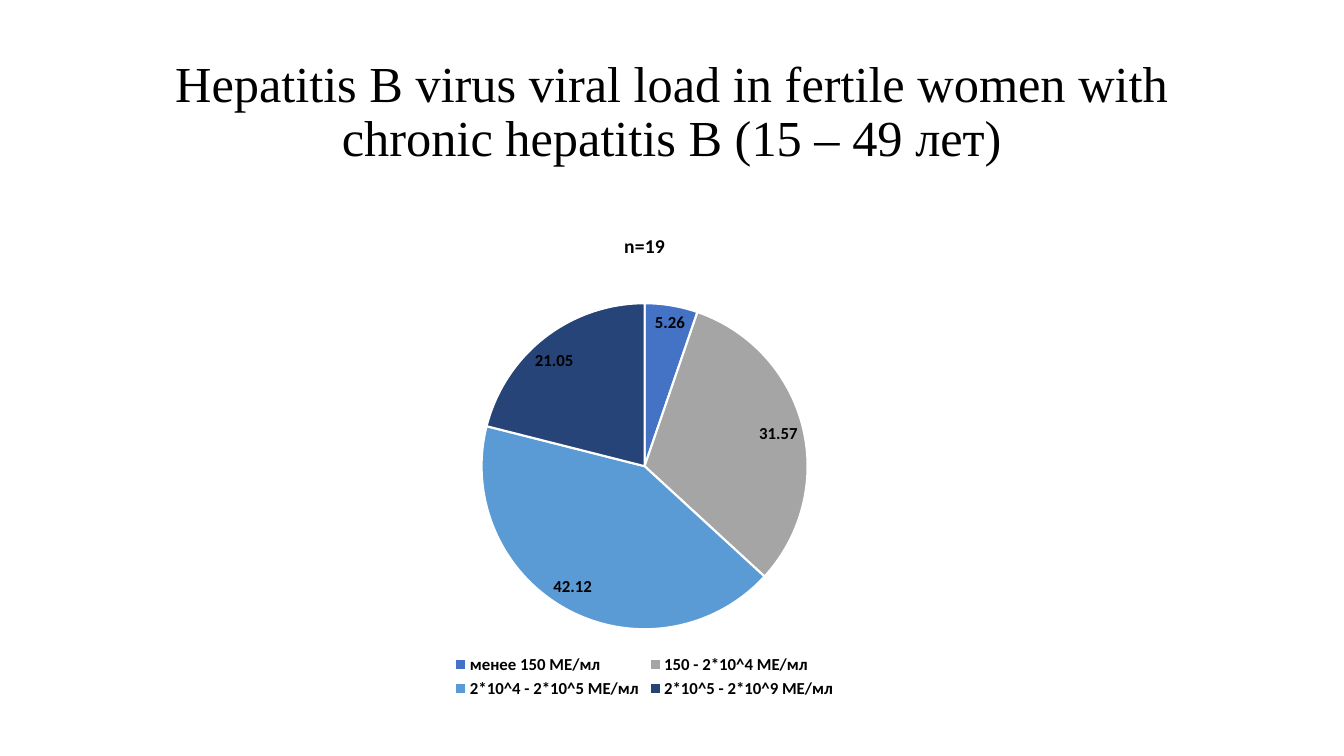
from pptx import Presentation
from pptx.chart.data import CategoryChartData
from pptx.dml.color import RGBColor
from pptx.enum.chart import XL_CHART_TYPE, XL_LABEL_POSITION, XL_LEGEND_POSITION
from pptx.enum.text import MSO_ANCHOR, PP_ALIGN
from pptx.util import Cm, Pt

BLACK = RGBColor(0x00, 0x00, 0x00)
WHITE = RGBColor(0xFF, 0xFF, 0xFF)
BLUE = RGBColor(0x44, 0x72, 0xC4)
GREY = RGBColor(0xA5, 0xA5, 0xA5)
SKY = RGBColor(0x5B, 0x9B, 0xD5)
NAVY = RGBColor(0x26, 0x44, 0x78)

TITLE = "Hepatitis B virus viral load in fertile women with chronic hepatitis B (15 – 49 лет)"
COUNT = "n=19"
LOADS = [
    ("менее 150 МЕ/мл", 5.26, BLUE),
    ("150 - 2*10^4 МЕ/мл", 31.57, GREY),
    ("2*10^4 - 2*10^5 МЕ/мл", 42.12, SKY),
    ("2*10^5 - 2*10^9 МЕ/мл", 21.05, NAVY),
]
HEAD = {"name": "Times New Roman", "size": Pt(36), "bold": False}
LABEL = {"name": "Calibri", "size": Pt(12), "bold": True}
CAPTION = {**LABEL, "size": Pt(14)}


def style(font, look):
    for key, value in look.items():
        setattr(font, key, value)
    font.color.rgb = BLACK


def add_title(slide):
    title = slide.shapes.title
    place = {"left": Cm(2.33), "top": Cm(1.01), "width": Cm(29.21), "height": Cm(3.68)}
    for key, value in place.items():
        setattr(title, key, value)
    frame = title.text_frame
    frame.text = TITLE
    frame.word_wrap = True
    frame.vertical_anchor = MSO_ANCHOR.MIDDLE
    para = frame.paragraphs[0]
    para.alignment = PP_ALIGN.CENTER
    para.line_spacing = 0.9
    style(para.runs[0].font, HEAD)


def add_pie(slide):
    names, shares, fills = zip(*LOADS)
    data = CategoryChartData()
    data.categories = names
    data.add_series("Series 1", shares)
    chart = slide.shapes.add_chart(
        XL_CHART_TYPE.PIE, Cm(7.62), Cm(5.38), Cm(17.25), Cm(12.32), data
    ).chart
    style(chart.font, LABEL)

    chart.has_title = True
    caption = chart.chart_title.text_frame
    caption.text = COUNT
    style(caption.paragraphs[0].runs[0].font, CAPTION)

    chart.has_legend = True
    legend = chart.legend
    legend.position = XL_LEGEND_POSITION.BOTTOM
    legend.include_in_layout = False
    style(legend.font, LABEL)

    plot = chart.plots[0]
    plot.vary_by_categories = True
    pie = plot.series[0]
    for i, fill in enumerate(fills):
        slice_ = pie.points[i].format
        slice_.fill.solid()
        slice_.fill.fore_color.rgb = fill
        slice_.line.color.rgb = WHITE
        slice_.line.width = Pt(1.5)

    labels = pie.data_labels
    labels.show_value = True
    labels.show_percentage = False
    labels.position = XL_LABEL_POSITION.BEST_FIT
    style(labels.font, LABEL)


def main():
    deck = Presentation()
    deck.slide_width, deck.slide_height = Cm(33.87), Cm(19.05)
    slide = deck.slides.add_slide(deck.slide_layouts[5])
    add_title(slide)
    add_pie(slide)
    deck.save("out.pptx")


if __name__ == "__main__":
    main()
